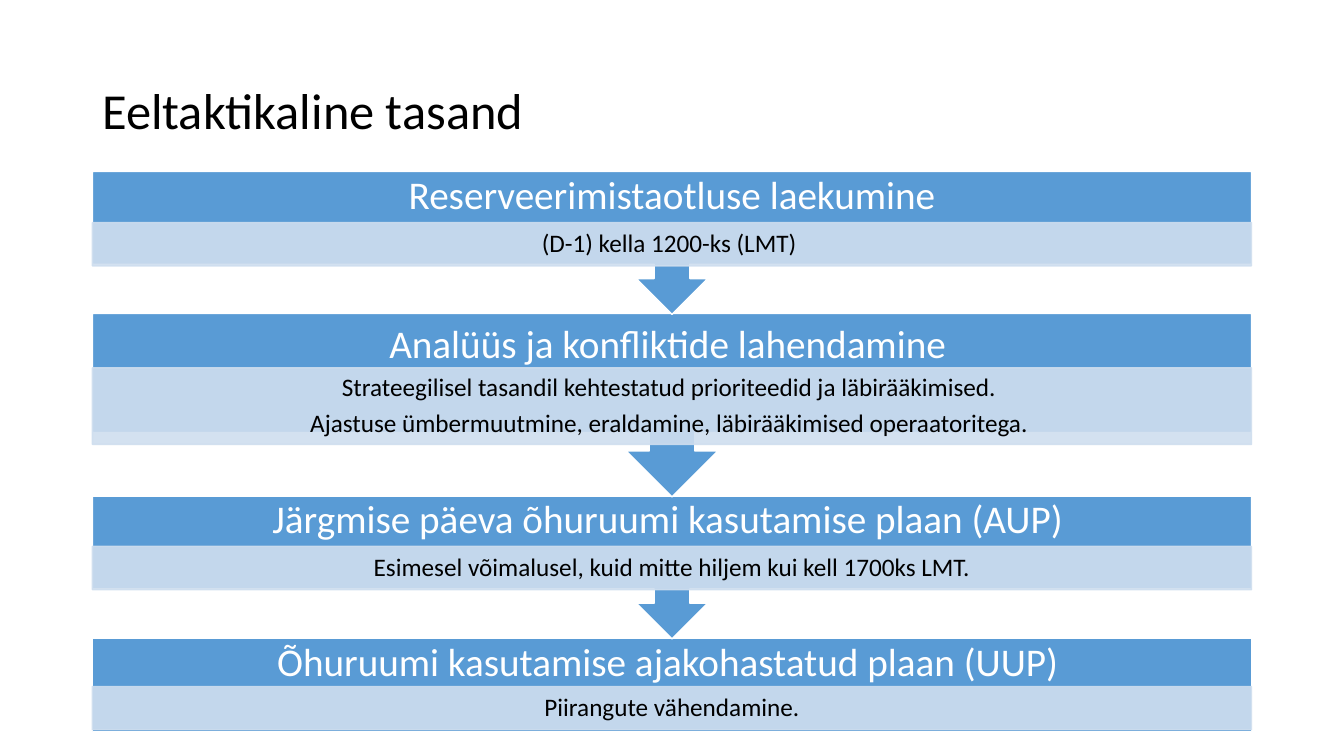
from dataclasses import dataclass

from lxml import etree
from pptx import Presentation
from pptx.dml.color import RGBColor
from pptx.enum import shapes, text
from pptx.oxml import ns
from pptx.util import Cm, Pt

BLUE = RGBColor(0x59, 0x9B, 0xD5)
PALE = RGBColor(0xCF, 0xDE, 0xEF)
WHITE = RGBColor(0xFF, 0xFF, 0xFF)
BLACK = RGBColor(0x00, 0x00, 0x00)

LEFT, WIDTH = 2.33, 29.21
ARROW_PROPORTIONS = (0.25, 0.25, 0.25, 0.65)

TITLE_STYLE = {"size": Pt(36), "color": BLACK, "align": text.PP_ALIGN.LEFT, "insets": (0.25, 0.13)}
HEADING_STYLE = {"size": Pt(28), "color": WHITE, "align": text.PP_ALIGN.CENTER, "insets": (0.56, 0.56)}
DETAIL_STYLE = {"size": Pt(18), "color": BLACK, "align": text.PP_ALIGN.CENTER, "insets": (0.36, 0.05)}


@dataclass
class Step:
    """One planning step; lengths are in centimetres."""

    heading: str
    details: tuple
    top: float
    height: float
    heading_height: float
    detail_top: float
    detail_height: float
    leads_on: bool = True


STEPS = (
    Step("Reserveerimistaotluse laekumine", ("(D-1) kella 1200-ks (LMT) ",),
         4.32, 3.6, 1.27, 5.61, 1.09),
    Step("Analüüs ja konfliktide lahendamine ",
         ("Strateegilisel tasandil kehtestatud prioriteedid ja läbirääkimised. ",
          "Ajastuse ümbermuutmine, eraldamine, läbirääkimised operaatoritega. "),
         7.9, 4.62, 1.63, 9.27, 1.93),
    Step("Järgmise päeva õhuruumi kasutamise plaan (AUP) ",
         ("Esimesel võimalusel, kuid mitte hiljem kui kell 1700ks LMT.",),
         12.5, 3.6, 1.27, 13.77, 1.09),
    Step("Õhuruumi kasutamise ajakohastatud plaan (UUP) ", ("Piirangute vähendamine.",),
         16.08, 2.36, 1.27, 17.3, 1.09, leads_on=False),
)


def add_label(slide, lines, top, height, style):
    """Add a full-width text box with one paragraph per line."""
    frame = slide.shapes.add_textbox(Cm(LEFT), Cm(top), Cm(WIDTH), Cm(height)).text_frame
    side, edge = style["insets"]
    layout = {
        "word_wrap": True,
        "auto_size": text.MSO_AUTO_SIZE.NONE,
        "vertical_anchor": text.MSO_ANCHOR.MIDDLE,
        "margin_left": Cm(side),
        "margin_right": Cm(side),
        "margin_top": Cm(edge),
        "margin_bottom": Cm(edge),
    }
    for name, value in layout.items():
        setattr(frame, name, value)
    for index, line in enumerate(lines):
        paragraph = frame.add_paragraph() if index else frame.paragraphs[0]
        paragraph.alignment = style["align"]
        paragraph.line_spacing = 0.9
        paragraph.space_before = Pt(6.3 if index else 0)
        run = paragraph.add_run()
        run.text = line
        for name, value in {"name": "Calibri", "size": style["size"]}.items():
            setattr(run.font, name, value)
        run.font.color.rgb = style["color"]


def add_panel(slide, kind, top, height, fill, outline):
    """Add a full-width filled shape with a thin outline."""
    panel = slide.shapes.add_shape(kind, Cm(LEFT), Cm(top), Cm(WIDTH), Cm(height))
    panel.shadow.inherit = False
    panel.fill.solid()
    panel.fill.fore_color.rgb = fill
    panel.line.color.rgb = outline
    panel.line.width = Pt(1)
    return panel


def make_translucent(panel, percent):
    """Set the opacity of a panel's fill and outline."""
    for color in panel.fill._xPr.iter(ns.qn("a:srgbClr")):
        etree.SubElement(color, ns.qn("a:alpha"), val=str(percent * 1000))


def add_step(slide, step):
    """Add a step with its heading, detail band and any arrow onwards."""
    if step.leads_on:
        kind = shapes.MSO_SHAPE.UP_ARROW_CALLOUT
        callout = add_panel(slide, kind, step.top, step.height, BLUE, WHITE)
        callout.rotation = 180
        for index, proportion in enumerate(ARROW_PROPORTIONS):
            callout.adjustments[index] = proportion
    else:
        add_panel(slide, shapes.MSO_SHAPE.RECTANGLE, step.top, step.height, BLUE, WHITE)
    add_label(slide, (step.heading,), step.top, step.heading_height, HEADING_STYLE)
    band = add_panel(slide, shapes.MSO_SHAPE.RECTANGLE, step.detail_top, step.detail_height, PALE, PALE)
    make_translucent(band, 90)
    add_label(slide, step.details, step.detail_top, step.detail_height, DETAIL_STYLE)


def main():
    """Build the slide and save it."""
    deck = Presentation()
    deck.slide_width, deck.slide_height = Cm(33.87), Cm(19.05)
    slide = deck.slides.add_slide(deck.slide_layouts[6])
    add_label(slide, ("Eeltaktikaline tasand",), 1.02, 3.68, TITLE_STYLE)
    for step in reversed(STEPS):
        add_step(slide, step)
    deck.save("out.pptx")


if __name__ == "__main__":
    main()
